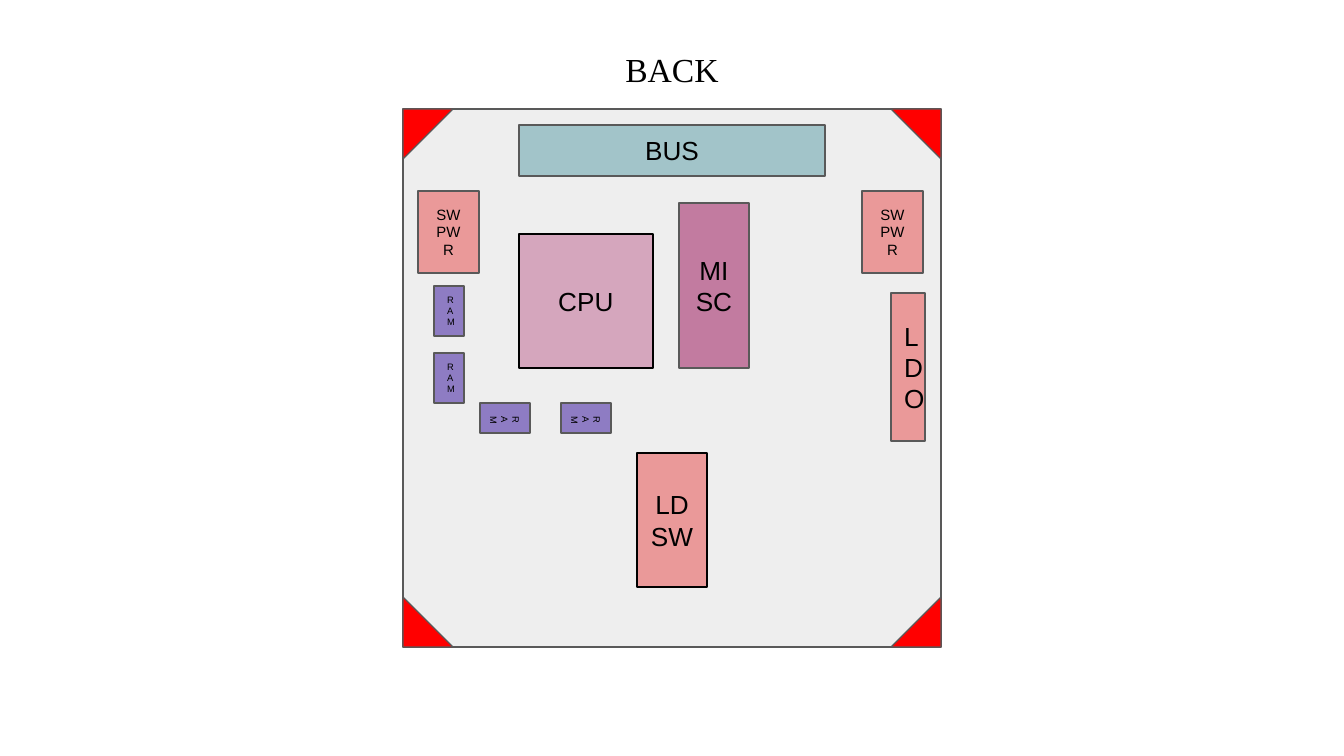
"""Build a slide with the component layout on the back of a circuit board."""
from dataclasses import dataclass

from pptx import Presentation
from pptx import util as u
from pptx.dml.color import RGBColor
from pptx.enum import shapes, text
from pptx.shapes.autoshape import Shape
from pptx.slide import Slide

SLIDE_WIDTH, SLIDE_HEIGHT = 1344, 756
EMU_PER_PX = u.Inches(10) / SLIDE_WIDTH

BLACK = RGBColor(0x00, 0x00, 0x00)
OUTLINE = RGBColor(0x59, 0x59, 0x59)
BOARD_GRAY = RGBColor(0xEE, 0xEE, 0xEE)
CORNER_RED = RGBColor(0xFF, 0x00, 0x00)
POWER_PINK = RGBColor(0xEA, 0x99, 0x99)
CPU_PINK = RGBColor(0xD5, 0xA6, 0xBD)
MISC_PLUM = RGBColor(0xC2, 0x7B, 0xA0)
RAM_PURPLE = RGBColor(0x8E, 0x7C, 0xC3)
BUS_TEAL = RGBColor(0xA2, 0xC4, 0xC9)

BOARD_LEFT, BOARD_TOP, BOARD_SIZE = 403, 109, 538
CORNER_SIZE = 50
INSET = u.Inches(0.1)


@dataclass(frozen=True)
class Block:
    left: int
    top: int
    width: int
    height: int
    fill: RGBColor
    label: str = ""
    size: int = 14
    line: RGBColor = OUTLINE
    rotation: int = 0
    kind: shapes.MSO_SHAPE = shapes.MSO_SHAPE.RECTANGLE


def px(length: int) -> u.Emu:
    return u.Emu(round(length * EMU_PER_PX))


def write_label(shape: Shape, label: str, size: int, font: str) -> None:
    frame = shape.text_frame
    frame.word_wrap = True
    frame.margin_left = frame.margin_right = INSET
    frame.margin_top = frame.margin_bottom = INSET
    paragraph = frame.paragraphs[0]
    paragraph.text = label
    paragraph.alignment = text.PP_ALIGN.CENTER
    paragraph.font.name = font
    paragraph.font.size = u.Pt(size)
    paragraph.font.color.rgb = BLACK


def draw_block(slide: Slide, block: Block) -> None:
    shape = slide.shapes.add_shape(
        block.kind, px(block.left), px(block.top), px(block.width), px(block.height)
    )
    shape.rotation = block.rotation
    shape.shadow.inherit = False
    shape.fill.solid()
    shape.fill.fore_color.rgb = block.fill
    shape.line.color.rgb = block.line
    shape.line.width = u.Pt(0.75)
    if block.label:
        write_label(shape, block.label, block.size, "Arial")
        shape.text_frame.vertical_anchor = text.MSO_ANCHOR.MIDDLE


def draw_title(slide: Slide, title: str) -> None:
    box = slide.shapes.add_textbox(px(146), px(36), px(1052), px(67))
    write_label(box, title, 18, "Times New Roman")
    box.text_frame.auto_size = text.MSO_AUTO_SIZE.SHAPE_TO_FIT_TEXT


def corner(column: int, row: int, rotation: int) -> Block:
    step = BOARD_SIZE - CORNER_SIZE
    return Block(
        BOARD_LEFT + column * step, BOARD_TOP + row * step, CORNER_SIZE, CORNER_SIZE,
        CORNER_RED, rotation=rotation, kind=shapes.MSO_SHAPE.RIGHT_TRIANGLE,
    )


def switching_power(left: int) -> Block:
    return Block(left, 191, 61, 82, POWER_PINK, "SW PWR", 8)


def ram(left: int, top: int, rotation: int = 0) -> Block:
    return Block(left, top, 30, 50, RAM_PURPLE, "RAM", 5, rotation=rotation)


BOARD = [
    Block(BOARD_LEFT, BOARD_TOP, BOARD_SIZE, BOARD_SIZE, BOARD_GRAY),
    corner(0, 1, 0),
    corner(1, 1, 270),
    corner(0, 0, 90),
    corner(1, 0, 180),
]

COMPONENTS = [
    switching_power(862),
    switching_power(418),
    Block(891, 293, 34, 148, POWER_PINK, "LDO"),
    Block(519, 234, 134, 134, CPU_PINK, "CPU", line=BLACK),
    Block(637, 453, 70, 134, POWER_PINK, "LD SW", line=BLACK),
    Block(679, 203, 70, 165, MISC_PLUM, "MISC"),
    ram(434, 353),
    ram(571, 393, 90),
    ram(490, 393, 90),
    ram(434, 286),
    Block(519, 125, 306, 51, BUS_TEAL, "BUS"),
]


def main() -> None:
    presentation = Presentation()
    presentation.slide_width = px(SLIDE_WIDTH)
    presentation.slide_height = px(SLIDE_HEIGHT)
    slide = presentation.slides.add_slide(presentation.slide_layouts[6])
    for block in BOARD:
        draw_block(slide, block)
    draw_title(slide, "BACK")
    for block in COMPONENTS:
        draw_block(slide, block)
    presentation.save("out.pptx")


if __name__ == "__main__":
    main()
